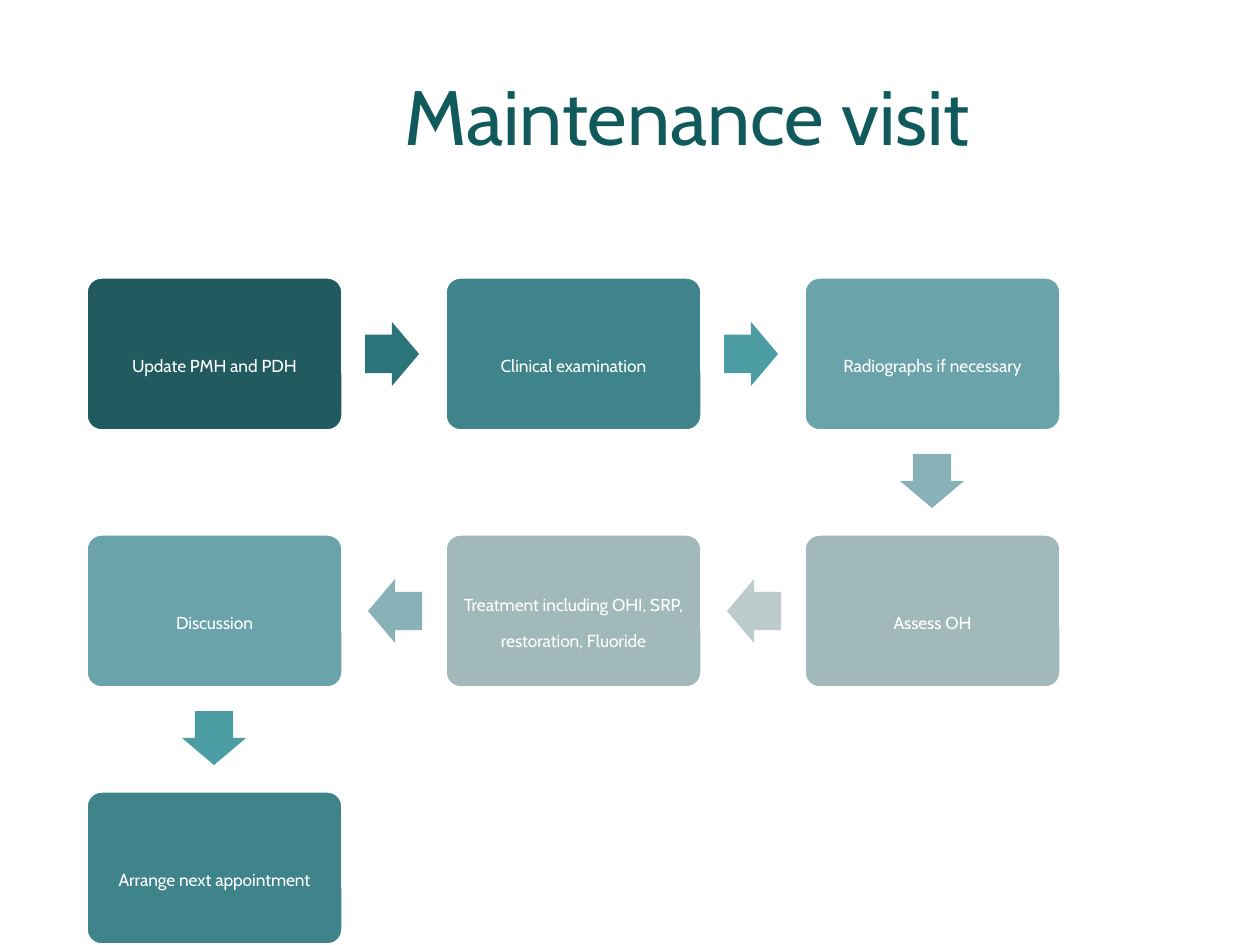
from dataclasses import dataclass
from itertools import pairwise

from pptx import Presentation
from pptx.dml.color import RGBColor
from pptx.enum.shapes import MSO_SHAPE
from pptx.enum.text import MSO_ANCHOR, PP_ALIGN
from pptx.util import Emu, Pt

ROUND_RECT = MSO_SHAPE.ROUNDED_RECTANGLE
RIGHT_ARROW = MSO_SHAPE.RIGHT_ARROW
MIDDLE = MSO_ANCHOR.MIDDLE
CENTER = PP_ALIGN.CENTER

FONT = "Cabin"
WHITE = "FFFFFF"
EMU_PER_PX = 914400 / 126
BOX_LEFT, BOX_TOP = 86, 277
BOX_W, BOX_H = 257, 154
COL_PITCH, ROW_PITCH = 359, 257
ARROW_W, ARROW_H = 54, 64
ARROW_OFFSET = 50
BOX_INSET = 13


@dataclass(frozen=True)
class Step:
    text: str
    col: int
    row: int
    fill: str
    arrow_fill: str = ""

    @property
    def center(self) -> tuple[int, int]:
        return (BOX_LEFT + self.col * COL_PITCH + BOX_W // 2,
                BOX_TOP + self.row * ROW_PITCH + BOX_H // 2)


STEPS = [
    Step("Update PMH and PDH", 0, 0, "215A5F", "2B757A"),
    Step("Clinical examination", 1, 0, "3F848A", "4D9DA5"),
    Step("Radiographs if necessary", 2, 0, "6AA3A9", "88B2B7"),
    Step("Assess OH", 2, 1, "A2B9BB", "BECBCD"),
    Step("Treatment including OHI, SRP, restoration, Fluoride", 1, 1,
         "A2B9BB", "88B2B7"),
    Step("Discussion", 0, 1, "6AA3A9", "4D9DA5"),
    Step("Arrange next appointment", 0, 2, "3F848A"),
]
ROTATIONS = {(1, 0): 0, (0, 1): 90, (-1, 0): 180}


def px(n: int) -> Emu:
    return Emu(round(n * EMU_PER_PX))


def color(value: str) -> RGBColor:
    return RGBColor.from_string(value)


def add_filled(shapes, kind, center: tuple[int, int], w: int, h: int, fill: str):
    x, y = center
    s = shapes.add_shape(kind, px(x - w // 2), px(y - h // 2), px(w), px(h))
    s.shadow.inherit = False
    s.fill.solid()
    s.fill.fore_color.rgb = color(fill)
    s.line.fill.background()
    return s


def set_text(s, text: str, size: int, font_color: str):
    tf = s.text_frame
    tf.word_wrap = True
    tf.vertical_anchor = MIDDLE
    p = tf.paragraphs[0]
    r = p.add_run()
    r.text = text
    p.font.name = FONT
    p.font.size = Pt(size)
    p.font.color.rgb = color(font_color)
    return p


def draw_step(shapes, step: Step) -> None:
    s = add_filled(shapes, ROUND_RECT, step.center, BOX_W, BOX_H, step.fill)
    s.adjustments[0] = 0.1
    s.line.color.rgb = color(WHITE)
    s.line.width = Pt(2)
    tf = s.text_frame
    tf.margin_left = tf.margin_right = px(BOX_INSET)
    tf.margin_top = tf.margin_bottom = px(BOX_INSET)
    p = set_text(s, step.text, 17, WHITE)
    p.alignment = CENTER
    p.line_spacing = 0.9
    p.space_after = Pt(6)
    p.runs[0].font._element.set("baseline", "-25000")


def draw_arrow(shapes, start: Step, end: Step) -> None:
    dx, dy = end.col - start.col, end.row - start.row
    x, y = start.center
    center = (x + dx * (BOX_W // 2 + ARROW_OFFSET),
              y + dy * (BOX_H // 2 + ARROW_OFFSET))
    s = add_filled(shapes, RIGHT_ARROW, center, ARROW_W, ARROW_H, start.arrow_fill)
    s.adjustments[0] = 0.6
    s.adjustments[1] = 0.5
    s.rotation = ROTATIONS[dx, dy]


def main() -> None:
    prs = Presentation()
    prs.slide_width, prs.slide_height = px(1260), px(945)
    shapes = prs.slides.add_slide(prs.slide_layouts[6]).shapes
    title = shapes.add_textbox(px(392), px(66), px(1008), px(98))
    set_text(title, "Maintenance visit", 44, "105A5B")
    for step in STEPS:
        draw_step(shapes, step)
    for start, end in pairwise(STEPS):
        draw_arrow(shapes, start, end)
    prs.save("out.pptx")


if __name__ == "__main__":
    main()
